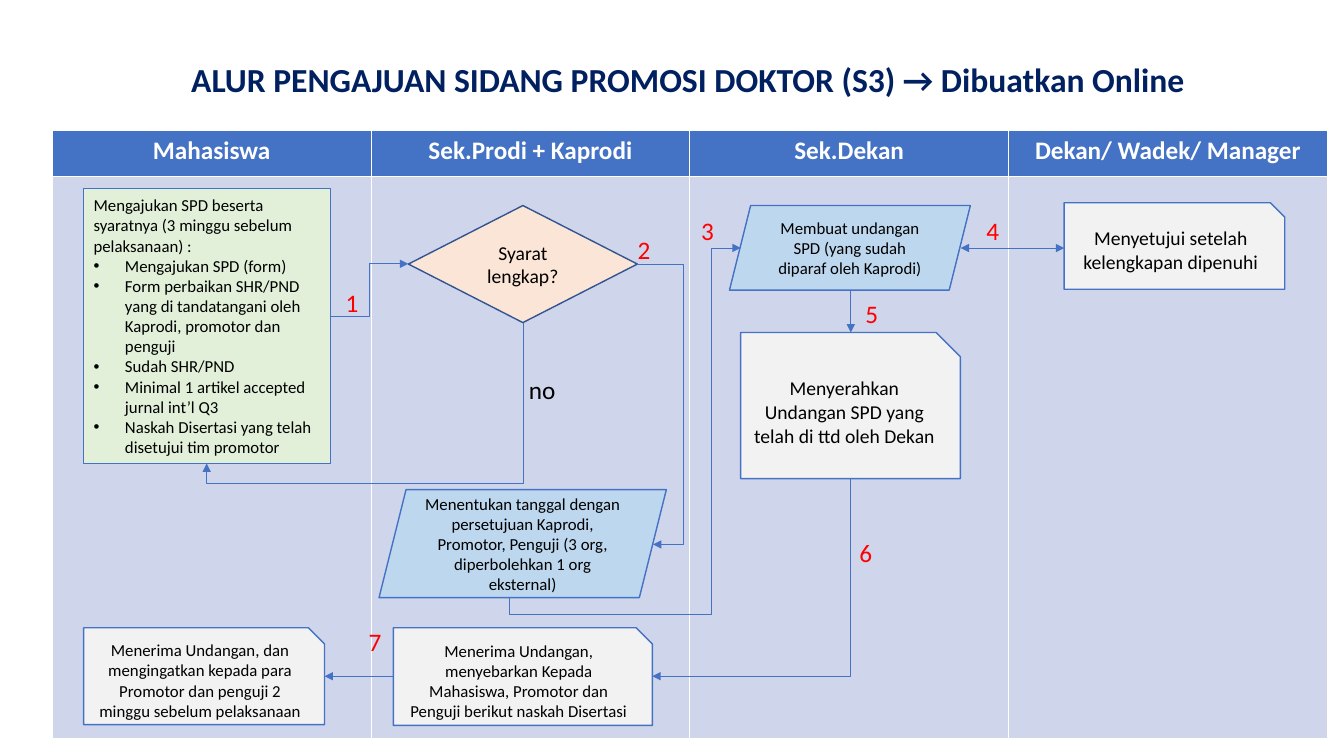
"""Builds the swimlane slide for the doctoral promotion session."""
from typing import NamedTuple

from lxml import etree
from pptx import Presentation
from pptx.dml.color import RGBColor
from pptx.enum.shapes import MSO_CONNECTOR, MSO_SHAPE
from pptx.enum.text import MSO_ANCHOR, PP_ALIGN
from pptx.oxml.ns import qn
from pptx.util import Cm, Pt

WHITE = RGBColor(0xFF, 0xFF, 0xFF)
BLACK = RGBColor(0x00, 0x00, 0x00)
RED = RGBColor(0xFF, 0x00, 0x00)
NAVY = RGBColor(0x00, 0x20, 0x60)
BLUE = RGBColor(0x44, 0x72, 0xC4)
DARK_BLUE = RGBColor(0x32, 0x54, 0x91)
LANE_FILL = RGBColor(0xCF, 0xD5, 0xEA)
GREEN = RGBColor(0xE2, 0xF0, 0xD9)
PEACH = RGBColor(0xFB, 0xE5, 0xD6)
SKY = RGBColor(0xBD, 0xD7, 0xEE)
GREY = RGBColor(0xF2, 0xF2, 0xF2)

FONT = "Calibri"
HEADER_HEIGHT = 1.17
LANES = ["Mahasiswa", "Sek.Prodi + Kaprodi", "Sek.Dekan", "Dekan/ Wadek/ Manager"]
REQUIREMENTS = [
    "Mengajukan SPD (form)",
    "Form perbaikan SHR/PND yang di tandatangani oleh Kaprodi, promotor dan penguji",
    "Sudah SHR/PND",
    "Minimal 1 artikel accepted jurnal int’l Q3",
    "Naskah Disertasi yang telah disetujui tim promotor",
]


class Box(NamedTuple):
    """A rectangle in centimetres."""
    left: float
    top: float
    width: float
    height: float

    def inner(self, left, top, width, height):
        """Return a box placed relative to this one."""
        return Box(self.left + left, self.top + top, width, height)

    def lengths(self):
        """Return the four sides as slide lengths."""
        return [Cm(value) for value in self]


def add_span(para, text, size, color, bold=False):
    """Add one formatted run to a paragraph."""
    span = para.add_run()
    span.text = text
    span.font.name = FONT
    span.font.size = Pt(size)
    span.font.bold = bold
    span.font.color.rgb = color


def add_label(page, box, text, size, color, bold=False):
    """Add a single-line text box."""
    frame = page.shapes.add_textbox(*box.lengths()).text_frame
    frame.word_wrap = False
    add_span(frame.paragraphs[0], text, size, color, bold)


def add_step(page, box, kind, fill, text, size, line=BLUE, align=PP_ALIGN.CENTER):
    """Add one flowchart step and return its text frame."""
    step = page.shapes.add_shape(kind, *box.lengths())
    step.shadow.inherit = False
    step.fill.solid()
    step.fill.fore_color.rgb = fill
    step.line.color.rgb = line
    step.line.width = Pt(1)
    frame = step.text_frame
    frame.word_wrap = True
    frame.vertical_anchor = MSO_ANCHOR.MIDDLE
    frame.paragraphs[0].alignment = align
    add_span(frame.paragraphs[0], text, size, BLACK)
    return frame


def add_bullet(frame, text):
    """Add a bulleted paragraph to a text frame."""
    para = frame.add_paragraph()
    para.alignment = PP_ALIGN.LEFT
    add_span(para, text, 12, BLACK)
    properties = para._p.get_or_add_pPr()
    properties.set("marL", str(Cm(0.79)))
    properties.set("indent", str(-Cm(0.79)))
    etree.SubElement(properties, qn("a:buFont")).set("typeface", "Arial")
    etree.SubElement(properties, qn("a:buChar")).set("char", "•")


def add_arrow(page, box, points, both_ends=False):
    """Add a straight or elbow arrow through points relative to the box."""
    points = [(box.left + x, box.top + y) for x, y in points]
    (x1, y1), (x2, y2) = points[0], points[-1]
    bent = len(points) > 2
    upright = bent and points[0][0] == points[1][0]
    kind = MSO_CONNECTOR.ELBOW if bent else MSO_CONNECTOR.STRAIGHT
    ends = x1, y1, x2, y2
    if upright:
        middle_x, middle_y = (x1 + x2) / 2, (y1 + y2) / 2
        half_x, half_y = (x2 - x1) / 2, (y2 - y1) / 2
        ends = (middle_x - half_y, middle_y + half_x,
                middle_x + half_y, middle_y - half_x)
    arrow = page.shapes.add_connector(kind, *[Cm(end) for end in ends])
    arrow.line.color.rgb = BLUE
    arrow.line.width = Pt(0.5)
    properties = arrow._element.spPr
    if upright:
        properties.find(qn("a:xfrm")).set("rot", "5400000")
    if bent:
        geometry = properties.find(qn("a:prstGeom"))
        geometry.set("prst", f"bentConnector{len(points) - 1}")
        guides = geometry.find(qn("a:avLst"))
        for number, point in enumerate(points[1:-2], 1):
            axis = (number + upright + 1) % 2
            start, end = points[0][axis], points[-1][axis]
            share = round((point[axis] - start) / (end - start) * 100000)
            guide = etree.SubElement(guides, qn("a:gd"))
            guide.set("name", f"adj{number}")
            guide.set("fmla", f"val {share}")
    line = arrow.line._get_or_add_ln()
    for end in ["headEnd", "tailEnd"] if both_ends else ["tailEnd"]:
        etree.SubElement(line, qn(f"a:{end}")).set("type", "triangle")
    etree.SubElement(properties, qn("a:effectLst"))


def add_lanes(page, box):
    """Add the table of lanes and return one box per lane."""
    table = page.shapes.add_table(2, len(LANES), *box.lengths()).table
    table.rows[0].height = Cm(HEADER_HEIGHT)
    table.rows[1].height = Cm(box.height - HEADER_HEIGHT)
    width = box.width / len(LANES)
    for column, name in enumerate(LANES):
        table.columns[column].width = Cm(width)
        for row, fill in enumerate([BLUE, LANE_FILL]):
            cell = table.cell(row, column)
            cell.fill.solid()
            cell.fill.fore_color.rgb = fill
        para = table.cell(0, column).text_frame.paragraphs[0]
        para.alignment = PP_ALIGN.CENTER
        add_span(para, name, 18, WHITE, True)
    return [box.inner(width * column, 0, width, box.height) for column in range(len(LANES))]


def add_student_lane(page, box):
    """Add the steps taken by the student."""
    frame = add_step(page, box.inner(0.79, 1.47, 6.22, 6.93), MSO_SHAPE.RECTANGLE, GREEN,
                     "Mengajukan SPD beserta syaratnya (3 minggu sebelum pelaksanaan) :",
                     12, align=PP_ALIGN.LEFT)
    for requirement in REQUIREMENTS:
        add_bullet(frame, requirement)
    add_step(page, box.inner(0.79, 12.54, 6.07, 2.44), MSO_SHAPE.SNIP_1_RECTANGLE, GREY,
             "Menerima Undangan, dan mengingatkan kepada para Promotor dan penguji 2 "
             "minggu sebelum pelaksanaan", 12)


def add_programme_lane(page, box):
    """Add the steps taken by the study programme."""
    add_step(page, box.inner(0.94, 1.9, 5.77, 2.95), MSO_SHAPE.DIAMOND, PEACH,
             "Syarat lengkap?", 14, DARK_BLUE)
    add_step(page, box.inner(0.2, 9.06, 7.24, 2.72), MSO_SHAPE.PARALLELOGRAM, SKY,
             "Menentukan tanggal dengan persetujuan Kaprodi, Promotor, Penguji (3 org, "
             "diperbolehkan 1 org eksternal)", 12)
    add_step(page, box.inner(0.56, 12.54, 6.53, 2.46), MSO_SHAPE.SNIP_1_RECTANGLE, GREY,
             "Menerima Undangan, menyebarkan Kepada Mahasiswa, Promotor dan Penguji "
             "berikut naskah Disertasi", 12)


def add_secretary_lane(page, box):
    """Add the steps taken by the dean's secretary."""
    add_step(page, box.inner(1, 1.9, 6.07, 2.13), MSO_SHAPE.PARALLELOGRAM, SKY,
             "Membuat undangan SPD (yang sudah diparaf oleh Kaprodi)", 12)
    add_step(page, box.inner(1.28, 5.1, 5.54, 3.68), MSO_SHAPE.SNIP_1_RECTANGLE, GREY,
             "Menyerahkan Undangan SPD yang telah di ttd oleh Dekan", 14)


def add_dean_lane(page, box):
    """Add the step taken by the dean."""
    add_step(page, box.inner(1.4, 1.83, 5.56, 2.18), MSO_SHAPE.SNIP_1_RECTANGLE, GREY,
             "Menyetujui setelah kelengkapan dipenuhi", 14)


def add_flow(page, box):
    """Add the arrows between steps and their labels."""
    routes = [
        [(6.99, 4.7), (7.98, 4.7), (7.98, 3.37), (8.97, 3.37)],
        [(11.86, 4.85), (11.86, 8.89), (3.89, 8.89), (3.89, 8.4)],
        [(14.73, 3.37), (15.9, 3.37), (15.9, 10.44), (15.14, 10.44)],
        [(11.51, 11.78), (11.51, 12.21), (16.61, 12.21), (16.61, 2.97), (17.35, 2.97)],
        [(20.12, 4.03), (20.12, 5.1)],
        [(20.12, 8.78), (20.12, 13.76), (15.12, 13.76)],
        [(8.59, 13.76), (6.86, 13.76)],
    ]
    for route in routes:
        add_arrow(page, box, route)
    add_arrow(page, box, [(22.89, 2.97), (25.5, 2.97)], both_ends=True)
    add_label(page, box.inner(11.76, 6.02, 1.19, 1.02), "no", 18, BLACK)
    corners = [(7.14, 3.83), (14.5, 2.51), (16.1, 2.03), (23.29, 2.03),
               (20.24, 4.11), (20.09, 10.13), (7.72, 12.37)]
    for number, (left, top) in enumerate(corners, 1):
        add_label(page, box.inner(left, top, 0.84, 1.02), str(number), 18, RED)


def main():
    """Build and save the deck."""
    deck = Presentation()
    deck.slide_width, deck.slide_height = Cm(33.87), Cm(19.05)
    page = deck.slides.add_slide(deck.slide_layouts[6])
    chart = Box(1.32, 3.28, 32.13, 15.32)
    lane_builders = [add_student_lane, add_programme_lane, add_secretary_lane, add_dean_lane]
    for build, lane in zip(lane_builders, add_lanes(page, chart)):
        build(page, lane)
    add_flow(page, chart)
    add_label(page, Box(4.57, 1.37, 25.83, 1.27),
              "ALUR PENGAJUAN SIDANG PROMOSI DOKTOR (S3) → Dibuatkan Online", 24, NAVY, True)
    deck.save("out.pptx")


if __name__ == "__main__":
    main()
